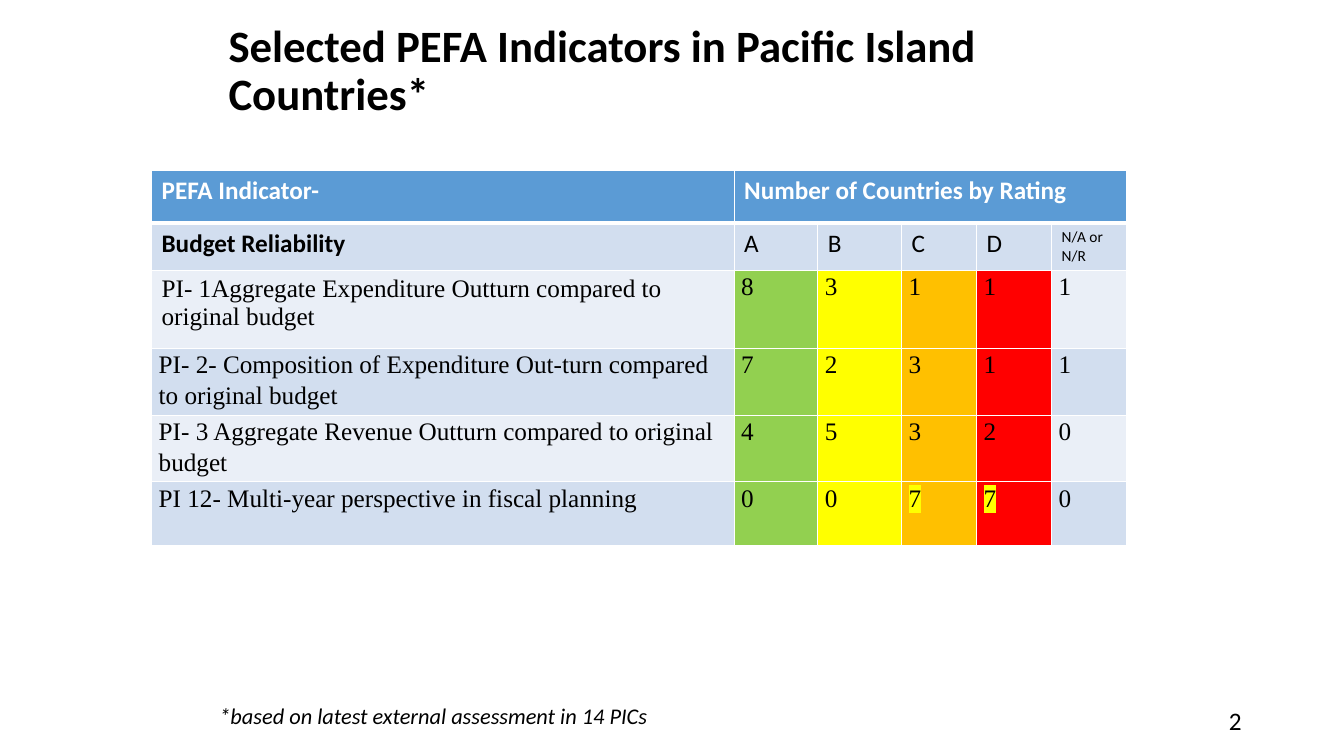
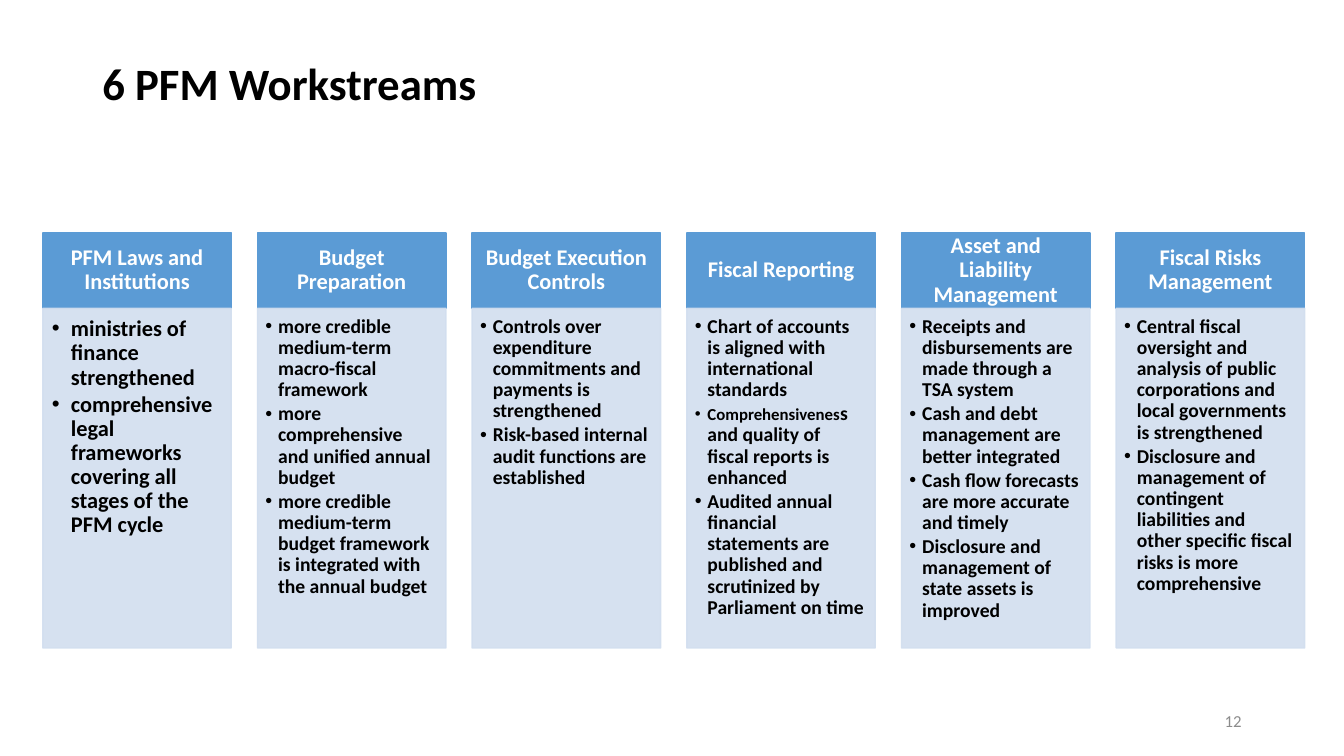
from dataclasses import dataclass

from lxml.etree import SubElement
from pptx import Presentation
from pptx.dml.color import RGBColor
from pptx.enum.shapes import MSO_SHAPE as Preset
from pptx.enum.text import MSO_ANCHOR as Anchor, PP_ALIGN as Align
from pptx.oxml.ns import qn
from pptx.util import Cm, Pt


@dataclass(frozen=True)
class Theme:
    # Fonts
    sans: str = "Calibri"
    serif: str = "Times New Roman"
    # Colours
    black: str = "000000"
    white: str = "FFFFFF"
    grey: str = "8C8C8C"
    header: str = "5B9BD5"
    band: str = "D2DEEF"
    light_band: str = "EAEFF7"
    highlight: str = "FFFF00"
    ratings: tuple = ("92D050", "FFFF00", "FFC000", "FF0000")
    # Type sizes in points
    title: int = 32
    body: int = 18
    card: int = 16
    bullet: int = 14
    small: int = 12
    tiny: int = 11
    # Lines
    tight: float = 0.9
    loose: float = 1.1


THEME = Theme()

RATING_HEADS = ["A", "B", "C", "D", "N/A or N/R"]
INDICATORS = [
    ("PI- 1Aggregate Expenditure Outturn compared to original budget", "83111"),
    ("PI- 2- Composition of Expenditure Out-turn compared to original budget", "72311"),
    ("PI- 3 Aggregate Revenue Outturn compared to original budget", "45320"),
    ("PI 12- Multi-year perspective in fiscal planning", "00770"),
]
HIGHLIGHTED = {(3, 2), (3, 3)}  # indicator and rating positions

# A bullet is a list of (text, size) runs or a plain string
WORKSTREAMS = [
    ("PFM Laws and Institutions", [
        "ministries of finance strengthened",
        "comprehensive legal frameworks covering all stages of the PFM cycle"]),
    ("Budget Preparation", [
        "more credible medium-term macro-fiscal framework",
        "more comprehensive and unified annual budget",
        "more credible medium-term budget framework is integrated with the annual budget"]),
    ("Budget Execution Controls", [
        "Controls over expenditure commitments and payments is strengthened",
        "Risk-based internal audit functions are established"]),
    ("Fiscal Reporting", [
        "Chart of accounts is aligned with international standards",
        [("Comprehensivenes", THEME.small),
         ("s and quality of fiscal reports is enhanced", THEME.bullet)],
        "Audited annual financial statements are published and scrutinized by "
        "Parliament on time"]),
    ("Asset and Liability Management", [
        "Receipts and disbursements are made through a TSA system",
        "Cash and debt management are better integrated",
        "Cash flow forecasts are more accurate and timely",
        "Disclosure and management of state assets is improved"]),
    ("Fiscal Risks Management", [
        "Central fiscal oversight and analysis of public corporations and local "
        "governments is strengthened",
        "Disclosure and management of contingent liabilities and other specific "
        "fiscal risks is more comprehensive"]),
]


# Text
def add_run(paragraph, text, size, colour=THEME.black, font=THEME.sans,
            bold=False, italic=False, highlight=None):
    run = paragraph.add_run()
    run.text = text
    run.font.size = Pt(size)
    run.font.name = font
    run.font.bold = bold
    run.font.italic = italic
    run.font.color.rgb = RGBColor.from_string(colour)
    if highlight:
        properties = run.font._element
        mark = SubElement(properties, qn("a:highlight"))
        SubElement(mark, qn("a:srgbClr"), val=highlight)
        properties.find(qn("a:latin")).addprevious(mark)


def set_margins(frame, left, top, right, bottom):
    frame.margin_left, frame.margin_top = Cm(left), Cm(top)
    frame.margin_right, frame.margin_bottom = Cm(right), Cm(bottom)


def add_text(slide, box, text, size, anchor=Anchor.TOP, align=Align.LEFT,
             spacing=1.0, **style):
    frame = slide.shapes.add_textbox(*map(Cm, box)).text_frame
    frame.word_wrap = True
    frame.vertical_anchor = anchor
    paragraph = frame.paragraphs[0]
    paragraph.alignment = align
    paragraph.line_spacing = spacing
    add_run(paragraph, text, size, **style)


def add_title(slide, box, text):
    add_text(slide, box, text, THEME.title, Anchor.MIDDLE,
             spacing=THEME.tight, bold=True)


def add_page_number(slide, number, size, colour):
    add_text(slide, (23.92, 17.65, 7.62, 1.01), number, size, Anchor.MIDDLE,
             Align.RIGHT, colour=colour)


def set_bullet(paragraph, indent):
    properties = paragraph._p.get_or_add_pPr()
    properties.set("marL", str(Cm(indent)))
    properties.set("indent", str(-Cm(indent)))
    SubElement(properties, qn("a:buFont"), typeface="Arial")
    SubElement(properties, qn("a:buChar"), char="•")


# Table
def set_borders(cell, top=1, bottom=1):
    properties = cell._tc.get_or_add_tcPr()
    for side, width in (("L", 1), ("R", 1), ("T", top), ("B", bottom)):
        line = SubElement(properties, qn(f"a:ln{side}"), w=str(Pt(width)))
        fill = SubElement(line, qn("a:solidFill"))
        SubElement(fill, qn("a:srgbClr"), val=THEME.white)


def fill_cell(cell, text, fill, size=THEME.body, compact=False, **style):
    cell.fill.solid()
    cell.fill.fore_color.rgb = RGBColor.from_string(fill)
    paragraph = cell.text_frame.paragraphs[0]
    if compact:
        set_margins(cell, 0.18, 0, 0.18, 0)
        paragraph.line_spacing = THEME.loose
    add_run(paragraph, text, size, **style)


def add_indicator_table(slide):
    widths = [14.68, 2.11, 2.11, 1.89, 1.89, 1.89]
    heights = [1.32, 1.17, 1.98, 1.47, 1.6, 1.6]
    table = slide.shapes.add_table(
        len(heights), len(widths), Cm(3.82), Cm(4.3),
        Cm(sum(widths)), Cm(sum(heights))).table
    for column, width in zip(table.columns, widths):
        column.width = Cm(width)
    for index, (row, height) in enumerate(zip(table.rows, heights)):
        row.height = Cm(height)
        for cell in row.cells:
            set_borders(cell, top=3 if index == 1 else 1,
                        bottom=3 if index == 0 else 1)

    # Header rows
    table.cell(0, 1).merge(table.cell(0, len(widths) - 1))
    for column, text in enumerate(["PEFA Indicator-", "Number of Countries by Rating"]):
        fill_cell(table.cell(0, column), text, THEME.header,
                  colour=THEME.white, bold=True)
    fill_cell(table.cell(1, 0), "Budget Reliability", THEME.band, bold=True)
    for column, text in enumerate(RATING_HEADS, 1):
        size = THEME.body if len(text) == 1 else THEME.tiny
        fill_cell(table.cell(1, column), text, THEME.band, size)

    # Indicator rows
    for index, (label, counts) in enumerate(INDICATORS):
        band = THEME.band if index % 2 else THEME.light_band
        fill_cell(table.cell(index + 2, 0), label, band,
                  compact=index > 0, font=THEME.serif)
        for rating, (count, fill) in enumerate(zip(counts, (*THEME.ratings, band))):
            mark = THEME.highlight if (index, rating) in HIGHLIGHTED else None
            fill_cell(table.cell(index + 2, rating + 1), count, fill,
                      compact=True, font=THEME.serif, highlight=mark)


# Workstream cards
def add_panel(slide, box, colour, opacity=100):
    shape = slide.shapes.add_shape(Preset.RECTANGLE, *map(Cm, box))
    shape.shadow.inherit = False
    shape.line.width = Pt(1)
    for fill in (shape.fill, shape.line.fill):
        fill.solid()
        fill.fore_color.rgb = RGBColor.from_string(colour)
    if opacity < 100:
        for tone in shape._element.spPr.iter(qn("a:srgbClr")):
            SubElement(tone, qn("a:alpha"), val=str(opacity * 1000))
    shape.text_frame.word_wrap = True
    return shape.text_frame


def add_card(slide, left, heading, bullets, size, indent, margins):
    top, width, head_height, body_height = 5.87, 4.75, 1.9, 8.56
    head = add_panel(slide, (left, top, width, head_height), THEME.header)
    set_margins(head, 0.3, 0.18, 0.3, 0.18)
    head.vertical_anchor = Anchor.MIDDLE
    paragraph = head.paragraphs[0]
    paragraph.alignment = Align.CENTER
    paragraph.line_spacing = THEME.tight
    add_run(paragraph, heading, THEME.card, THEME.white, bold=True)

    body = add_panel(slide, (left, top + head_height, width, body_height),
                     THEME.band, opacity=90)
    set_margins(body, *margins)
    body.vertical_anchor = Anchor.TOP
    for index, bullet in enumerate(bullets):
        paragraph = body.add_paragraph() if index else body.paragraphs[0]
        paragraph.alignment = Align.LEFT
        paragraph.line_spacing = THEME.tight
        paragraph.space_after = Pt(2)
        set_bullet(paragraph, indent)
        runs = [(bullet, size)] if isinstance(bullet, str) else bullet
        for text, run_size in runs:
            add_run(paragraph, text, run_size, bold=True)


# Slides
def build_indicators(slide):
    add_title(slide, (5.51, 0.76, 22.86, 2.11),
              "Selected PEFA Indicators in Pacific Island Countries*")
    add_indicator_table(slide)
    add_text(slide, (5.28, 17.58, 23.7, 0.94),
             "*based on latest external assessment in 14 PICs",
             THEME.card, italic=True)
    add_page_number(slide, "2", THEME.body, THEME.black)


def build_workstreams(slide):
    add_title(slide, (2.33, 1.02, 29.21, 2.29), "6 PFM Workstreams")
    first_left, pitch = 1.08, 5.41
    large = (THEME.card, 0.48, (0.23, 0.23, 0.3, 0.36))
    regular = (THEME.bullet, 0.32, (0.2, 0.2, 0.27, 0.3))
    for index, (heading, bullets) in enumerate(WORKSTREAMS):
        style = regular if index else large
        add_card(slide, first_left + index * pitch, heading, bullets, *style)
    add_page_number(slide, "12", THEME.small, THEME.grey)


def main():
    presentation = Presentation()
    presentation.slide_width, presentation.slide_height = Cm(33.87), Cm(19.05)
    blank = presentation.slide_layouts[6]
    for build in (build_indicators, build_workstreams):
        build(presentation.slides.add_slide(blank))
    presentation.save("out.pptx")


if __name__ == "__main__":
    main()
